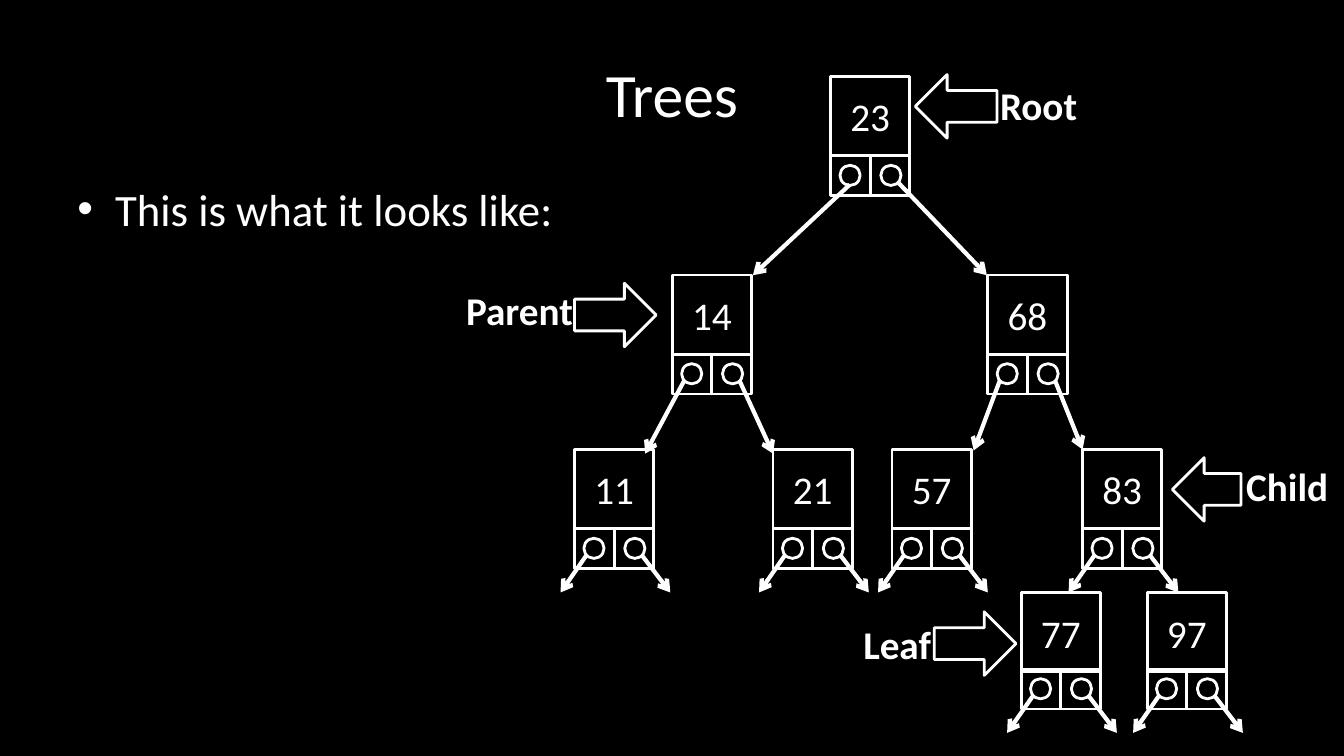
import pptx
import pptx.dml.color
import pptx.enum.shapes
import pptx.enum.text
import pptx.oxml
import pptx.oxml.ns
import pptx.util

Pt = pptx.util.Pt
SHAPE = pptx.enum.shapes.MSO_SHAPE
CENTER = pptx.enum.text.PP_ALIGN.CENTER
LEFT = pptx.enum.text.PP_ALIGN.LEFT
MIDDLE = pptx.enum.text.MSO_ANCHOR.MIDDLE
TOP = pptx.enum.text.MSO_ANCHOR.TOP

COLORS = {"back": "000000", "ink": "FFFFFF"}
FORMATS = {
    "title": {"name": "Calibri", "size": Pt(44)},
    "body": {"name": "Calibri", "size": Pt(32)},
    "key": {"name": "Calibri", "size": Pt(28)},
    "label": {"name": "Calibri", "size": Pt(28), "bold": True},
}
BOX = 56.7
CELL = BOX / 2
DOT = 14.4
TREE = [
    ("23", 593.3, 54.7, (537.8, 196.6), (704.9, 196.6)),
    ("14", 480.2, 196.4, (460.8, 324), (552.2, 324)),
    ("68", 705.6, 196.4, (695.5, 321.8), (773.3, 321.1)),
    ("11", 410.4, 321.1, None, None),
    ("21", 552.2, 321.1, None, None),
    ("57", 637.2, 321.1, None, None),
    ("83", 773.3, 321.1, None, None),
    ("77", 729.4, 423.4, None, None),
    ("97", 819.4, 423.4, None, None),
]
LABELS = [
    ("Root", (707, 54.7, 69.8), (653.8, 53.3, 58.3), 0),
    ("Parent", (325.4, 200.9, 91.4), (410.4, 202.3, 58.3), 180),
    ("Child", (882.7, 326.9, 73.4), (837.4, 326.9, 49), 0),
    ("Leaf", (609.1, 439.2, 63.4), (667.4, 437, 58.3), 180),
]


class Deck:
    def __init__(self, width, height):
        self.prs = pptx.Presentation()
        self.prs.slide_width, self.prs.slide_height = Pt(width), Pt(height)
        self.s = self.prs.slides.add_slide(self.prs.slide_layouts[1])
        self.fill(self.s.background.fill, "back")

    def color(self, name):
        return pptx.dml.color.RGBColor.from_string(COLORS[name])

    def fill(self, fill, name):
        if name:
            fill.solid()
            fill.fore_color.rgb = self.color(name)
        else:
            fill.background()

    def text(self, sp, text, style, align=CENTER, anchor=MIDDLE):
        tf = sp.text_frame
        tf.vertical_anchor = anchor
        p = tf.paragraphs[0]
        p.alignment = align
        r = p.add_run()
        r.text = text
        for name, value in FORMATS[style].items():
            setattr(r.font, name, value)
        r.font.color.rgb = self.color("ink")
        return tf

    def placeholder(self, idx, at, text, style, align, anchor):
        sp = self.s.placeholders[idx]
        for name, value in zip(("left", "top", "width", "height"), at):
            setattr(sp, name, Pt(value))
        self.text(sp, text, style, align, anchor)

    def shape(self, kind, x, y, w, h, fill=None, rotation=0):
        sp = self.s.shapes.add_shape(kind, Pt(x), Pt(y), Pt(w), Pt(h))
        sp.shadow.inherit = False
        sp.rotation = rotation
        self.fill(sp.fill, fill)
        sp.line.color.rgb = self.color("ink")
        sp.line.width = Pt(2)
        return sp

    def label(self, text, x, y, w):
        sp = self.s.shapes.add_textbox(Pt(x), Pt(y), Pt(w), Pt(41))
        tf = self.text(sp, text, "label", anchor=TOP)
        tf.word_wrap = False
        tf.auto_size = pptx.enum.text.MSO_AUTO_SIZE.SHAPE_TO_FIT_TEXT

    def link(self, start, end):
        kind = pptx.enum.shapes.MSO_CONNECTOR.STRAIGHT
        sp = self.s.shapes.add_connector(kind, *(Pt(v) for v in (*start, *end)))
        sp.line.color.rgb = self.color("ink")
        sp.line.width = Pt(3)
        ns = pptx.oxml.ns.nsdecls("a")
        head = pptx.oxml.parse_xml(f'<a:tailEnd {ns} type="arrow"/>')
        sp.line._get_or_add_ln().append(head)
        sp._element.spPr.append(pptx.oxml.parse_xml(f"<a:effectLst {ns}/>"))

    def node(self, key, x, y, left_end, right_end):
        row = y + BOX
        if y > 400:
            row -= 2
        for i in range(2):
            self.shape(SHAPE.RECTANGLE, x + i * CELL, row, CELL, CELL)
        for dx in (6.7, 35.9):
            self.shape(SHAPE.OVAL, x + dx, row + 6.7, DOT, DOT, "back")
        left_start = (x + 13.7, row + 20.5) if key == "23" else (x + 8.6, row + 18.7)
        self.link(left_start, left_end or (x - 10, row + 45.4))
        self.link((x + 48, row + 18.7), right_end or (x + 68.4, row + 45.4))
        self.text(self.shape(SHAPE.RECTANGLE, x, y, BOX, BOX), key, "key")


def main():
    deck = Deck(960, 540)
    deck.placeholder(0, (48, 21.6, 864, 90), "Trees", "title", CENTER, MIDDLE)
    deck.placeholder(1, (48, 126, 864, 356.4), "This is what it looks like:",
                     "body", LEFT, TOP)
    for node in TREE:
        deck.node(*node)
    for text, place, (x, y, w), rotation in LABELS:
        deck.label(text, *place)
        deck.shape(SHAPE.LEFT_ARROW, x, y, w, 45.4, "back", rotation)
    deck.prs.save("out.pptx")


if __name__ == "__main__":
    main()
